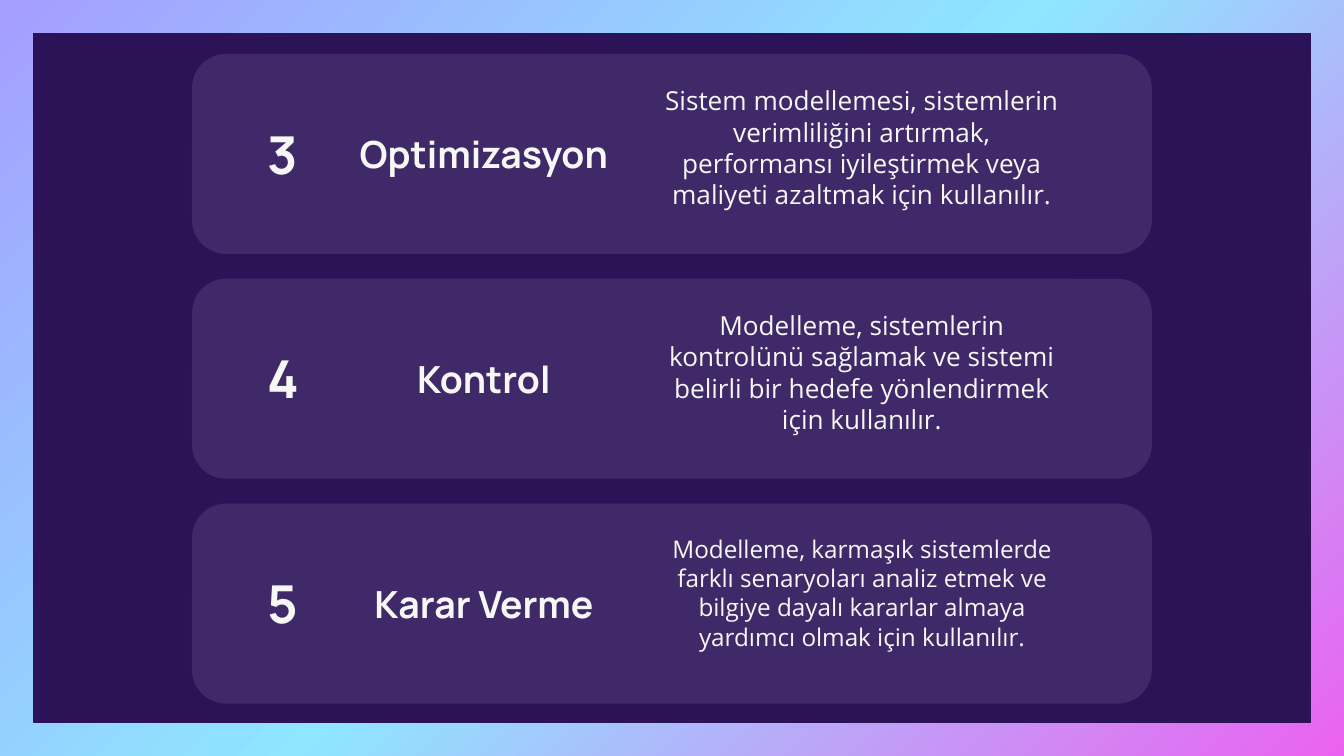
"""Build a slide of three numbered cards on the uses of system modelling."""
from copy import deepcopy
from typing import NamedTuple

from pptx import Presentation
from pptx.dml.color import RGBColor
from pptx.enum.shapes import MSO_SHAPE as Preset
from pptx.enum.text import MSO_ANCHOR as Anchor, MSO_AUTO_SIZE as AutoSize, PP_ALIGN as Align
from pptx.oxml.ns import qn
from pptx.shapes.autoshape import Shape
from pptx.slide import Slide
from pptx.util import Cm, Pt

PANEL = RGBColor(0x2C, 0x12, 0x56)
CARD = RGBColor(0x40, 0x29, 0x68)
TEXT = RGBColor(0xF7, 0xF7, 0xF5)
GRADIENT = (
    (0, RGBColor(0xA4, 0x9E, 0xFF)),
    (0.5, RGBColor(0x8E, 0xE6, 0xFF)),
    (1, RGBColor(0xEB, 0x62, 0xF0)),
)
HEADING_FONT = "Manrope"
BODY_FONT = "Open Sans"
FIRST_TOP = 1.02
PITCH = 4.25


class Box(NamedTuple):
    left: float
    top: float
    width: float
    height: float

    def lengths(self) -> tuple[Cm, ...]:
        return tuple(Cm(value) for value in self)

    def lowered(self, distance: float) -> "Box":
        return self._replace(top=self.top + distance)


class Style(NamedTuple):
    font: str
    size: int
    bold: bool
    anchor: Anchor


class Purpose(NamedTuple):
    number: str
    heading: str
    description: str
    size: int = 14


PANEL_BOX = Box(0.64, 0.64, 24.13, 13.01)
CARD_BOX = Box(3.63, 0, 18.14, 3.78)
HEADING_BOX = Box(6.3, 1.06, 5.69, 1.65)
DESCRIPTION_BOX = Box(12.24, 0.33, 8.1, 3.1)
NUMBER_BOX = Box(3.9, 1.06, 2.9, 1.63)

HEADING_STYLE = Style(HEADING_FONT, 20, True, Anchor.MIDDLE)
NUMBER_STYLE = Style(HEADING_FONT, 28, True, Anchor.MIDDLE)

PURPOSES = (
    Purpose("3", "Optimizasyon", "Sistem modellemesi, sistemlerin verimliliğini artırmak, "
            "performansı iyileştirmek veya maliyeti azaltmak için kullanılır."),
    Purpose("4", "Kontrol", "Modelleme, sistemlerin kontrolünü sağlamak ve sistemi "
            "belirli bir hedefe yönlendirmek için kullanılır."),
    Purpose("5", "Karar Verme", "Modelleme, karmaşık sistemlerde farklı senaryoları analiz etmek "
            "ve bilgiye dayalı kararlar almaya yardımcı olmak için kullanılır.", 13),
)


def paint_background(slide: Slide) -> None:
    fill = slide.background.fill
    fill.gradient()
    fill.gradient_angle = 315
    stop_list = next(slide.element.iter(qn("a:gsLst")))
    stop_list.append(deepcopy(stop_list[0]))
    for stop, (position, color) in zip(fill.gradient_stops, GRADIENT):
        stop.position = position
        stop.color.rgb = color


def add_block(slide: Slide, preset: Preset, box: Box, color: RGBColor) -> Shape:
    shape = slide.shapes.add_shape(preset, *box.lengths())
    shape.shadow.inherit = False
    shape.fill.solid()
    shape.fill.fore_color.rgb = color
    shape.line.fill.background()
    return shape


def write_text(shape: Shape, text: str, style: Style) -> None:
    frame = shape.text_frame
    frame.text = text
    frame.word_wrap = True
    frame.auto_size = AutoSize.NONE
    frame.vertical_anchor = style.anchor
    frame.margin_left = frame.margin_right = Cm(0.25)
    frame.margin_top = frame.margin_bottom = Cm(0.25)
    paragraph = frame.paragraphs[0]
    paragraph.alignment = Align.CENTER
    paragraph.font.name = style.font
    paragraph.font.size = Pt(style.size)
    paragraph.font.bold = style.bold
    paragraph.font.color.rgb = TEXT


def add_text(slide: Slide, box: Box, text: str, style: Style) -> None:
    write_text(slide.shapes.add_textbox(*box.lengths()), text, style)


def place_title(slide: Slide, box: Box, text: str) -> None:
    title = slide.shapes.title
    title.left, title.top, title.width, title.height = box.lengths()
    write_text(title, text, HEADING_STYLE)
    title.element.getparent().append(title.element)


def add_purpose(slide: Slide, purpose: Purpose, top: float, is_title: bool) -> None:
    card = add_block(slide, Preset.ROUNDED_RECTANGLE, CARD_BOX.lowered(top), CARD)
    card.adjustments[0] = 0.17
    heading_box = HEADING_BOX.lowered(top)
    if is_title:
        place_title(slide, heading_box, purpose.heading)
    else:
        add_text(slide, heading_box, purpose.heading, HEADING_STYLE)
    body_style = Style(BODY_FONT, purpose.size, False, Anchor.TOP)
    add_text(slide, DESCRIPTION_BOX.lowered(top), purpose.description, body_style)
    add_text(slide, NUMBER_BOX.lowered(top), purpose.number, NUMBER_STYLE)


def main() -> None:
    presentation = Presentation()
    presentation.slide_width, presentation.slide_height = Cm(25.4), Cm(14.29)
    slide = presentation.slides.add_slide(presentation.slide_layouts[5])
    paint_background(slide)
    panel = add_block(slide, Preset.RECTANGLE, PANEL_BOX, PANEL)
    panel.line.color.rgb = PANEL
    panel.line.width = Pt(0.75)
    for index, purpose in enumerate(PURPOSES):
        add_purpose(slide, purpose, FIRST_TOP + index * PITCH, index == 0)
    presentation.save("out.pptx")


if __name__ == "__main__":
    main()
